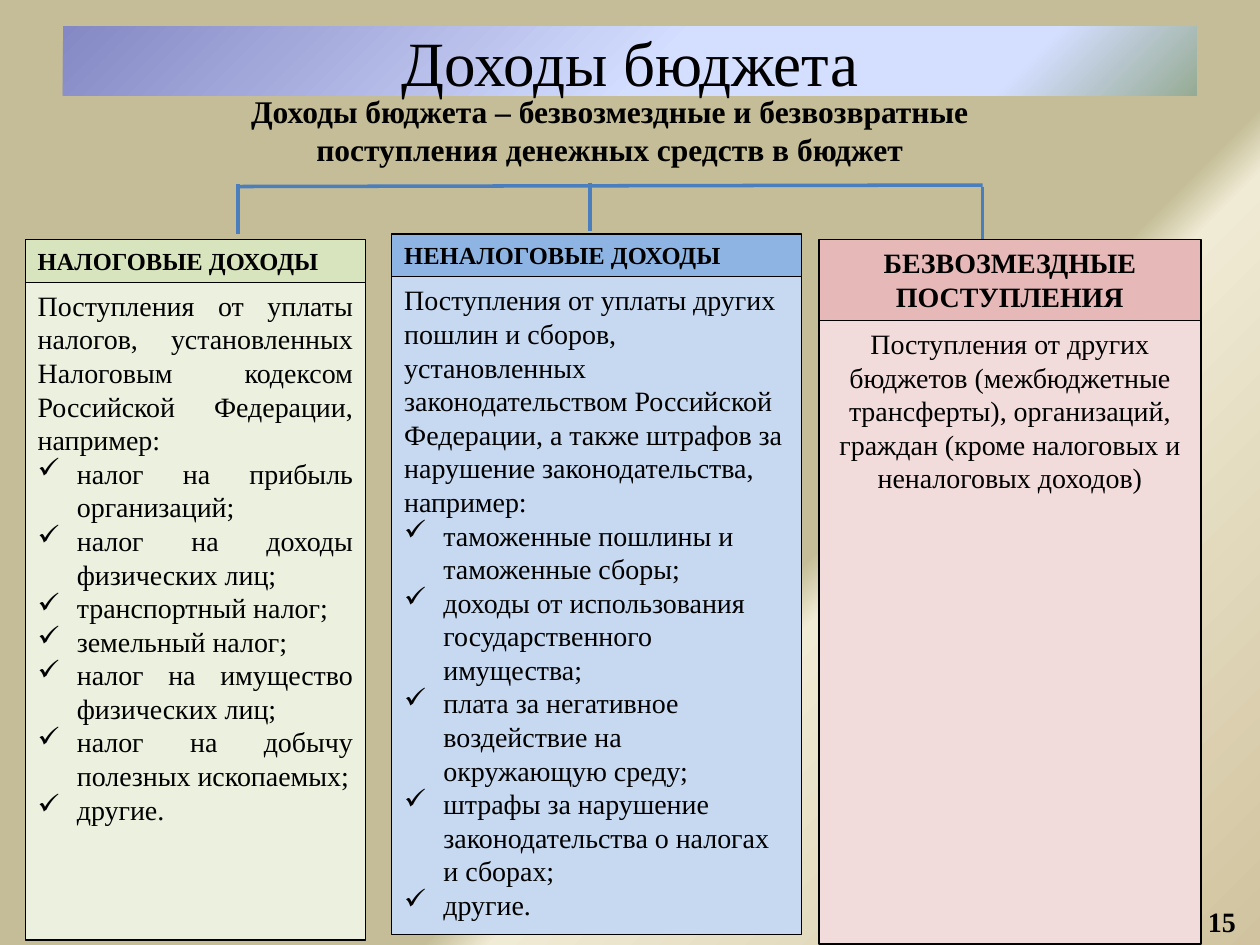
from lxml import etree
from pptx import Presentation
from pptx import util as u
from pptx.dml.color import RGBColor
from pptx.enum import shapes, text
from pptx.oxml.ns import qn

LEFT, CENTER, JUSTIFY = text.PP_ALIGN.LEFT, text.PP_ALIGN.CENTER, text.PP_ALIGN.JUSTIFY

THEME = {
    "font": "Times New Roman",
    "ink": "000000",
    "branch": "4B7EBC",
    "branch_width": 2,
    "title_size": 36,
    "subtitle_size": 18,
    "body_size": 16,
    "background": [(62, "C4BD97", 66), (65, "F0EBD5", 100), (100, "D1C39F", 100)],
    "banner": [(0, "8488C4", 100), (53, "D4DEFF", 100), (83, "D4DEFF", 100), (100, "96AB94", 100)],
}

TITLE = "Доходы бюджета"
SUBTITLE = "Доходы бюджета – безвозмездные и безвозвратные поступления денежных средств в бюджет"
PAGE = "15"

COLUMNS = [
    {
        "heading": "НАЛОГОВЫЕ ДОХОДЫ", "heading_size": 14, "heading_align": LEFT,
        "intro": "Поступления от уплаты налогов, установленных Налоговым кодексом "
                 "Российской Федерации, например:",
        "examples": ["налог на прибыль организаций;", "налог на доходы физических лиц;",
                     "транспортный налог;", "земельный налог;",
                     "налог на имущество физических лиц;",
                     "налог на добычу полезных ископаемых;", "другие."],
        "align": JUSTIFY, "fills": ("D7E4BD", "EBF1DE"),
        "left": 0.51, "top": 4.83, "width": 6.86, "heights": (0.86, 13.26),
    },
    {
        "heading": "НЕНАЛОГОВЫЕ ДОХОДЫ", "heading_size": 14, "heading_align": LEFT,
        "intro": "Поступления от уплаты других пошлин и сборов, установленных "
                 "законодательством Российской Федерации, а также штрафов за "
                 "нарушение законодательства, например:",
        "examples": ["таможенные пошлины и таможенные сборы;",
                     "доходы от использования государственного имущества;",
                     "плата за негативное воздействие на окружающую среду;",
                     "штрафы за нарушение законодательства о налогах и сборах;", "другие."],
        "align": LEFT, "fills": ("8EB4E3", "C6D9F1"),
        "left": 7.9, "top": 4.72, "width": 8.26, "heights": (0.86, 13.26),
    },
    {
        "heading": "БЕЗВОЗМЕЗДНЫЕ ПОСТУПЛЕНИЯ", "heading_size": 16, "heading_align": CENTER,
        "intro": "Поступления от других бюджетов (межбюджетные трансферты), организаций, "
                 "граждан (кроме налоговых и неналоговых доходов)",
        "examples": [],
        "align": CENTER, "fills": ("E6B9B8", "F2DCDB"),
        "left": 16.51, "top": 4.83, "width": 7.7, "heights": (1.63, 12.57),
    },
]

BRANCHES = [
    (4.8, 3.76, 19.81, 3.73),
    (11.89, 3.68, 11.89, 4.65),
    (19.81, 3.76, 19.81, 4.83),
    (4.8, 3.71, 4.8, 4.72),
]


def cm(values):
    return [u.Cm(value) for value in values]


def set_gradient(fill, owner, stops):
    fill.gradient()
    fill.gradient_angle = 315
    stop_list = next(owner.iter(qn("a:gsLst")))
    for old in list(stop_list):
        stop_list.remove(old)
    for position, color, opacity in stops:
        stop = etree.SubElement(stop_list, qn("a:gs"), pos=str(position * 1000))
        tint = etree.SubElement(stop, qn("a:srgbClr"), val=color)
        if opacity < 100:
            etree.SubElement(tint, qn("a:alpha"), val=str(opacity * 1000))


def add_check(paragraph):
    properties = paragraph._p.get_or_add_pPr()
    indent = u.Cm(0.79)
    properties.set("marL", str(indent))
    properties.set("indent", str(-indent))
    etree.SubElement(properties, qn("a:buChar"), char="✓")


def write(shape, lines, size, align, bold=False, grow=True, anchor=text.MSO_ANCHOR.TOP):
    frame = shape.text_frame
    frame.text = "\n".join(lines)
    frame.word_wrap = True
    frame.vertical_anchor = anchor
    frame.auto_size = text.MSO_AUTO_SIZE.SHAPE_TO_FIT_TEXT if grow else text.MSO_AUTO_SIZE.NONE
    for index, paragraph in enumerate(frame.paragraphs):
        paragraph.alignment = align
        if index:
            add_check(paragraph)
        for run in paragraph.runs:
            run.font.name = THEME["font"]
            run.font.size = u.Pt(size)
            run.font.bold = bold
            run.font.color.rgb = RGBColor.from_string(THEME["ink"])


def add_panel(slide, box, color):
    panel = slide.shapes.add_shape(shapes.MSO_SHAPE.RECTANGLE, *cm(box))
    panel.shadow.inherit = False
    panel.fill.solid()
    panel.fill.fore_color.rgb = RGBColor.from_string(color)
    panel.line.color.rgb = RGBColor.from_string(THEME["ink"])
    panel.line.width = u.Pt(0)
    return panel


def add_column(slide, column):
    left, top, width = column["left"], column["top"], column["width"]
    heading_height, body_height = column["heights"]
    heading_fill, body_fill = column["fills"]
    heading = add_panel(slide, (left, top, width, heading_height), heading_fill)
    write(heading, [column["heading"]], column["heading_size"], column["heading_align"], bold=True)
    body = add_panel(slide, (left, top + heading_height, width, body_height), body_fill)
    write(body, [column["intro"], *column["examples"]], THEME["body_size"], column["align"])


def add_branch(slide, ends):
    branch = slide.shapes.add_connector(shapes.MSO_CONNECTOR.STRAIGHT, *cm(ends))
    branch.line.color.rgb = RGBColor.from_string(THEME["branch"])
    branch.line.width = u.Pt(THEME["branch_width"])
    etree.SubElement(branch._element.spPr, qn("a:effectLst"))


def main():
    deck = Presentation()
    deck.slide_width, deck.slide_height = cm((25.4, 19.05))
    slide = deck.slides.add_slide(deck.slide_layouts[6])
    set_gradient(slide.background.fill, slide._element, THEME["background"])

    banner = slide.shapes.add_shape(shapes.MSO_SHAPE.RECTANGLE, *cm((1.27, 0.53, 22.86, 1.4)))
    banner.shadow.inherit = False
    banner.line.fill.background()
    set_gradient(banner.fill, banner._element, THEME["banner"])
    write(banner, [TITLE], THEME["title_size"], CENTER, grow=False, anchor=text.MSO_ANCHOR.MIDDLE)

    subtitle = slide.shapes.add_textbox(*cm((4.7, 1.73, 15.19, 1.8)))
    write(subtitle, [SUBTITLE], THEME["subtitle_size"], CENTER, bold=True)

    for ends in BRANCHES:
        add_branch(slide, ends)
    for column in COLUMNS:
        add_column(slide, column)

    page = slide.shapes.add_textbox(*cm((24.1, 18.11, 1.3, 0.94)))
    write(page, [PAGE], THEME["body_size"], LEFT, bold=True)

    deck.save("out.pptx")


if __name__ == "__main__":
    main()
